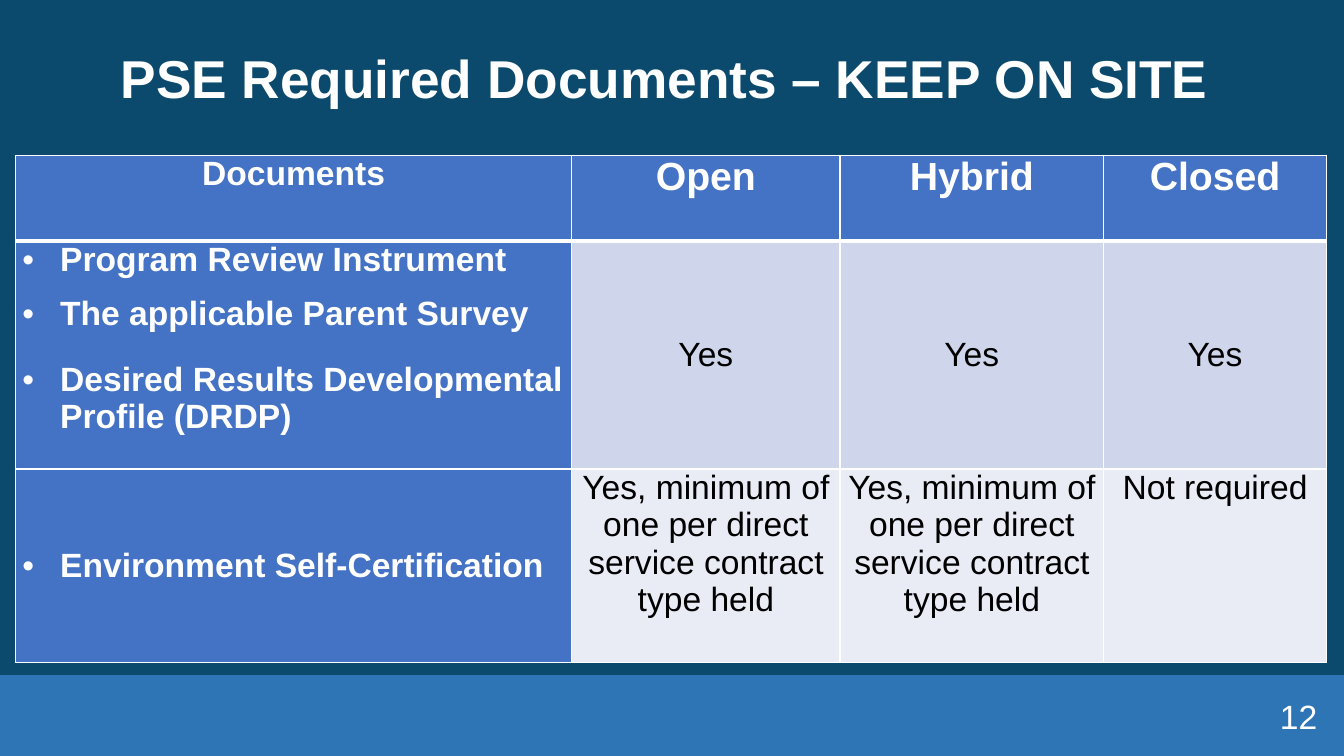
from lxml import etree
from pptx import Presentation
from pptx.dml.color import RGBColor
from pptx.enum import shapes, text
from pptx.oxml import ns
from pptx.util import Pt

NAVY = RGBColor(0x0C, 0x4A, 0x6D)
BAR = RGBColor(0x2E, 0x75, 0xB6)
BLUE = RGBColor(0x44, 0x72, 0xC4)
PALE = RGBColor(0xCF, 0xD5, 0xEA)
LIGHT = RGBColor(0xE9, 0xEB, 0xF5)
WHITE = RGBColor(0xFF, 0xFF, 0xFF)
BLACK = RGBColor(0, 0, 0)

LEFT, MID, RIGHT = text.PP_ALIGN.LEFT, text.PP_ALIGN.CENTER, text.PP_ALIGN.RIGHT
TOP, CENTER = text.MSO_ANCHOR.TOP, text.MSO_ANCHOR.MIDDLE

COLS = (397.5, 191.5, 188.5, 159)
ROWS = (61.25, 162.75, 138)
HEADS = ("Documents", "Open", "Hybrid", "Closed")
# Each document: its name, space before, space after
REVIEW = (
    ("Program Review Instrument", 0, 12),
    ("The applicable Parent Survey", 0, 0),
    ("Desired Results Developmental Profile (DRDP)", 20, 0),
)
SELF = (("Environment Self-Certification", 0, 0),)
MINIMUM = "Yes, minimum of one per direct service contract type held"
# Each body row: documents, answers, fill, anchor of the answers, anchor of the documents
BODY = (
    (REVIEW, ("Yes", "Yes", "Yes"), PALE, CENTER, TOP),
    (SELF, (MINIMUM, MINIMUM, "Not required"), LIGHT, TOP, CENTER),
)


def apply(item, props):
    for name, value in props.items():
        setattr(item, name, value)


def write(para, words, size, color=WHITE, bold=False, align=MID):
    para.alignment = align
    run = para.add_run()
    run.text = words
    apply(run.font, {"name": "Arial", "size": Pt(size), "bold": bold})
    run.font.color.rgb = color


def add_node(parent, tag, **attrs):
    node = etree.SubElement(parent, ns.qn(tag))
    for name, value in attrs.items():
        node.set(name, str(value))
    return node


def bullet(para):
    props = para._p.get_or_add_pPr()
    props.set("marL", str(Pt(27)))
    props.set("indent", str(Pt(-27)))
    add_node(props, "a:buFont", typeface="Arial")
    add_node(props, "a:buChar", char="•")


def style(cell, fill, anchor, top=1, bottom=1):
    apply(cell, {
        "margin_left": Pt(5), "margin_right": Pt(5),
        "margin_top": 0, "margin_bottom": 0, "vertical_anchor": anchor,
    })
    props = cell._tc.get_or_add_tcPr()
    for side, width in (("L", 1), ("R", 1), ("T", top), ("B", bottom)):
        line = add_node(props, f"a:ln{side}", w=Pt(width))
        add_node(add_node(line, "a:solidFill"), "a:srgbClr", val=WHITE)
    cell.fill.solid()
    cell.fill.fore_color.rgb = fill


def list_docs(cell, docs):
    frame = cell.text_frame
    for i, (name, before, after) in enumerate(docs):
        para = frame.add_paragraph() if i else frame.paragraphs[0]
        bullet(para)
        if before:
            para.space_before = Pt(before)
        if after:
            para.space_after = Pt(after)
        write(para, name, 24, bold=True, align=LEFT)


def add_bar(slide):
    bar = slide.shapes.add_shape(
        shapes.MSO_SHAPE.RECTANGLE, 0, Pt(482.25), Pt(960), Pt(57.75))
    bar.shadow.inherit = False
    bar.fill.solid()
    bar.fill.fore_color.rgb = BAR
    bar.line.fill.background()


def add_title(slide):
    title = slide.shapes.title
    apply(title, {"left": Pt(11.5), "top": Pt(16),
                  "width": Pt(937), "height": Pt(84)})
    frame = title.text_frame
    frame.vertical_anchor = CENTER
    para = frame.paragraphs[0]
    para.line_spacing = 0.9
    write(para, "PSE Required Documents – KEEP ON SITE ", 38, bold=True)


def add_grid(slide):
    grid = slide.shapes.add_table(
        len(ROWS), len(COLS), Pt(11), Pt(111), Pt(sum(COLS)), Pt(sum(ROWS))).table
    for col, width in zip(grid.columns, COLS):
        col.width = Pt(width)
    for row, height in zip(grid.rows, ROWS):
        row.height = Pt(height)

    # Header row
    for c, head in enumerate(HEADS):
        cell = grid.cell(0, c)
        style(cell, BLUE, TOP, bottom=3)
        write(cell.text_frame.paragraphs[0], head, 28 if c else 24, bold=True)

    # Documents and answers
    for r, (docs, answers, fill, anchor, side) in enumerate(BODY, 1):
        top = 3 if r == 1 else 1
        style(grid.cell(r, 0), BLUE, side, top)
        list_docs(grid.cell(r, 0), docs)
        for c, answer in enumerate(answers, 1):
            cell = grid.cell(r, c)
            style(cell, fill, anchor, top)
            write(cell.text_frame.paragraphs[0], answer, 24, BLACK)


def add_number(slide):
    box = slide.shapes.add_textbox(Pt(732), Pt(497), Pt(216), Pt(28.75))
    frame = box.text_frame
    apply(frame, {"word_wrap": True, "vertical_anchor": CENTER})
    write(frame.paragraphs[0], "12", 24, align=RIGHT)


def main():
    deck = Presentation()
    apply(deck, {"slide_width": Pt(960), "slide_height": Pt(540)})
    slide = deck.slides.add_slide(deck.slide_layouts[5])
    slide.background.fill.solid()
    slide.background.fill.fore_color.rgb = NAVY
    add_bar(slide)
    add_title(slide)
    add_grid(slide)
    add_number(slide)
    deck.save("out.pptx")


if __name__ == "__main__":
    main()
